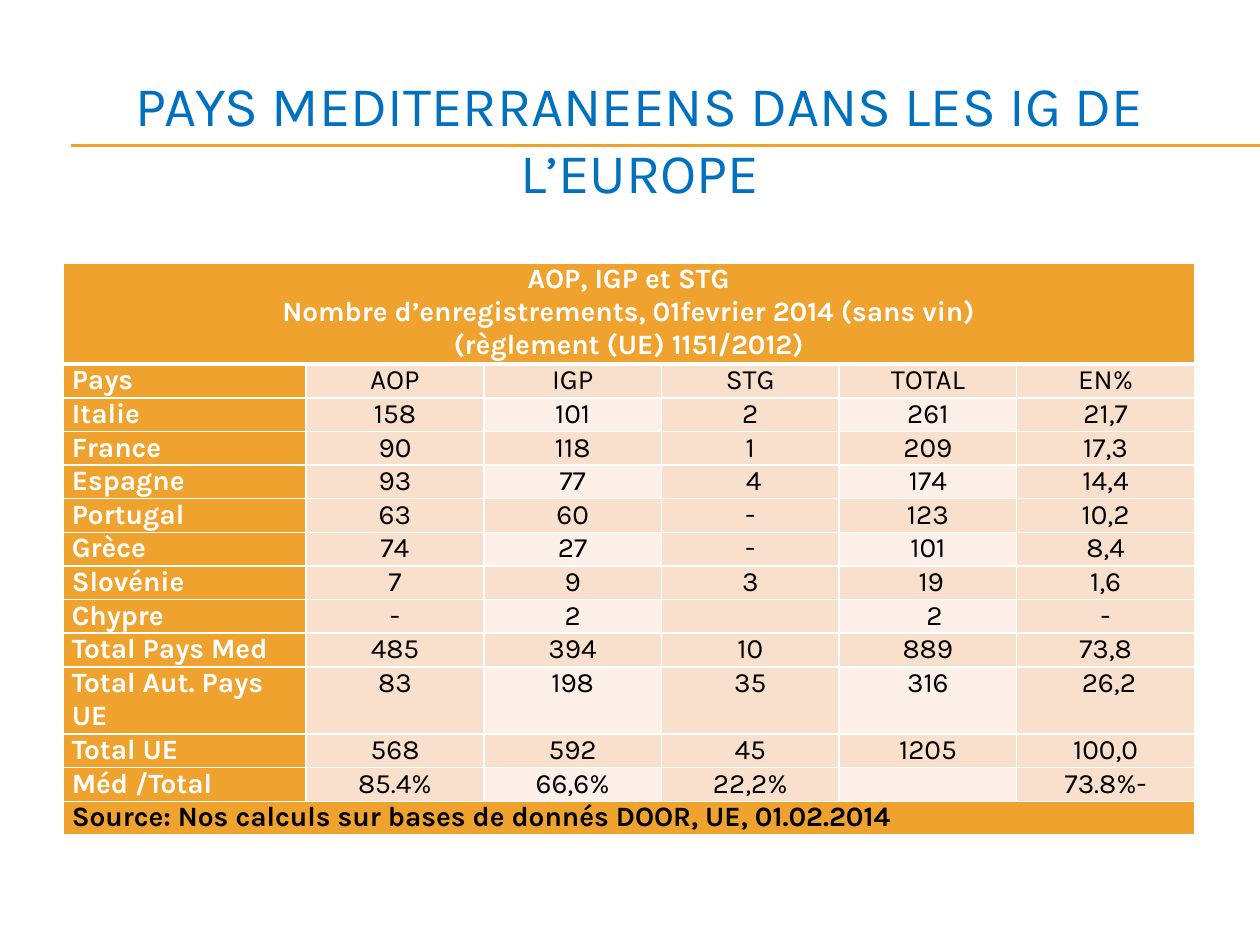
from lxml import etree
from pptx import Presentation
from pptx.dml.color import RGBColor
from pptx.enum import shapes, text
from pptx.oxml import ns
from pptx.util import Inches, Pt

FONT = "Karla"
ORANGE, PEACH, PALE = "F0A22E", "F9E0CD", "FCF0E8"
WHITE, BLACK, BLUE = "FFFFFF", "000000", "0070C0"
LINE = 0.26
WIDTHS = [1.93] + [1.41] * 5

HEADING = ["AOP, IGP et STG",
           "Nombre d’enregistrements, 01fevrier 2014 (sans vin)",
           "(règlement (UE) 1151/2012)"]
ROWS = [
    ["Pays", "AOP", "IGP", "STG", "TOTAL", "EN%"],
    ["Italie", "158", "101", "2", "261", "21,7"],
    ["France", "90", "118", "1", "209", "17,3"],
    ["Espagne", "93", "77", " 4", "174", "14,4"],
    ["Portugal", "63", "60", "-", "123", "10,2"],
    ["Grèce", "74", "27", "-", "101", "8,4"],
    ["Slovénie", "7", "9", "3", " 19", "1,6"],
    ["Chypre", "-", "2", "", "  2", "-"],
    ["Total Pays Med", "485", "394", "10", "889", "73,8"],
    ["Total Aut. Pays UE", "83", "198", "35", "316", " 26,2"],
    ["Total UE", "568", "592", "45", "1205", "100,0"],
    ["Méd /Total", "85.4%", "66,6%", "22,2%", "", "73.8%-"],
]
SOURCE = "Source: Nos calculs sur bases de donnés DOOR, UE, 01.02.2014"


def rgb(color):
    return RGBColor.from_string(color)


def write(frame, lines, size, color, bold=False, center=True):
    frame.text = "\n".join(lines)
    for para in frame.paragraphs:
        para.alignment = text.PP_ALIGN.CENTER if center else text.PP_ALIGN.LEFT
        font = para.font
        font.name, font.size, font.bold = FONT, Pt(size), bold
        font.color.rgb = rgb(color)


def add_title(slide, title):
    box = slide.shapes.add_textbox(Inches(0.33), Inches(0.63), Inches(9.5), Inches(0.92))
    frame = box.text_frame
    frame.word_wrap = True
    frame.vertical_anchor = text.MSO_ANCHOR.MIDDLE
    write(frame, [title], 32, BLUE)


def add_rule(slide, top):
    rule = slide.shapes.add_connector(
        shapes.MSO_CONNECTOR.STRAIGHT, Inches(0.56), Inches(top), Inches(10), Inches(top))
    rule.line.color.rgb = rgb(ORANGE)
    rule.line.width = Pt(0.75)
    etree.SubElement(rule.element.spPr, ns.qn("a:effectLst"))


def set_borders(cell, top=1, bottom=1):
    props = cell._tc.get_or_add_tcPr()
    for side, width in zip("LRTB", (1, 1, top, bottom)):
        edge = etree.SubElement(props, ns.qn("a:ln" + side), w=str(Pt(width)))
        fill = etree.SubElement(edge, ns.qn("a:solidFill"))
        etree.SubElement(fill, ns.qn("a:srgbClr"), val=WHITE)


def fill_cell(cell, lines, fill, color, bold, center, **edges):
    set_borders(cell, **edges)
    cell.fill.solid()
    cell.fill.fore_color.rgb = rgb(fill)
    cell.margin_left = cell.margin_right = Inches(0.07)
    cell.margin_top = cell.margin_bottom = 0
    write(cell.text_frame, lines, 16, color, bold, center)


def add_grid(slide):
    last = len(ROWS) + 1
    grid = slide.shapes.add_table(
        last + 1, len(WIDTHS), Inches(0.5), Inches(2.09), Inches(9), Inches(4.27)).table
    for col, width in zip(grid.columns, WIDTHS):
        col.width = Inches(width)
    for row in grid.rows:
        row.height = Inches(LINE)
    grid.rows[0].height = Inches(LINE * len(HEADING))

    for r in (0, last):
        grid.cell(r, 0).merge(grid.cell(r, len(WIDTHS) - 1))
    fill_cell(grid.cell(0, 0), HEADING, ORANGE, WHITE, True, True, bottom=3)
    for r, values in enumerate(ROWS, 1):
        top = 3 if r == 1 else 1
        for c, value in enumerate(values):
            cell = grid.cell(r, c)
            if c == 0:
                fill_cell(cell, [value], ORANGE, WHITE, True, False, top=top)
            else:
                pale = r % 2 == 0 and c % 2 == 0
                fill_cell(cell, [value], PALE if pale else PEACH, BLACK, False, True, top=top)
    fill_cell(grid.cell(last, 0), [SOURCE], ORANGE, BLACK, True, False)


def main():
    deck = Presentation()
    deck.slide_width, deck.slide_height = Inches(10), Inches(7.5)
    slide = deck.slides.add_slide(deck.slide_layouts[6])
    for top in (1.15, 1.16):
        add_rule(slide, top)
    add_title(slide, "PAYS MEDITERRANEENS DANS LES IG DE L’EUROPE")
    add_grid(slide)
    deck.save("out.pptx")


if __name__ == "__main__":
    main()
